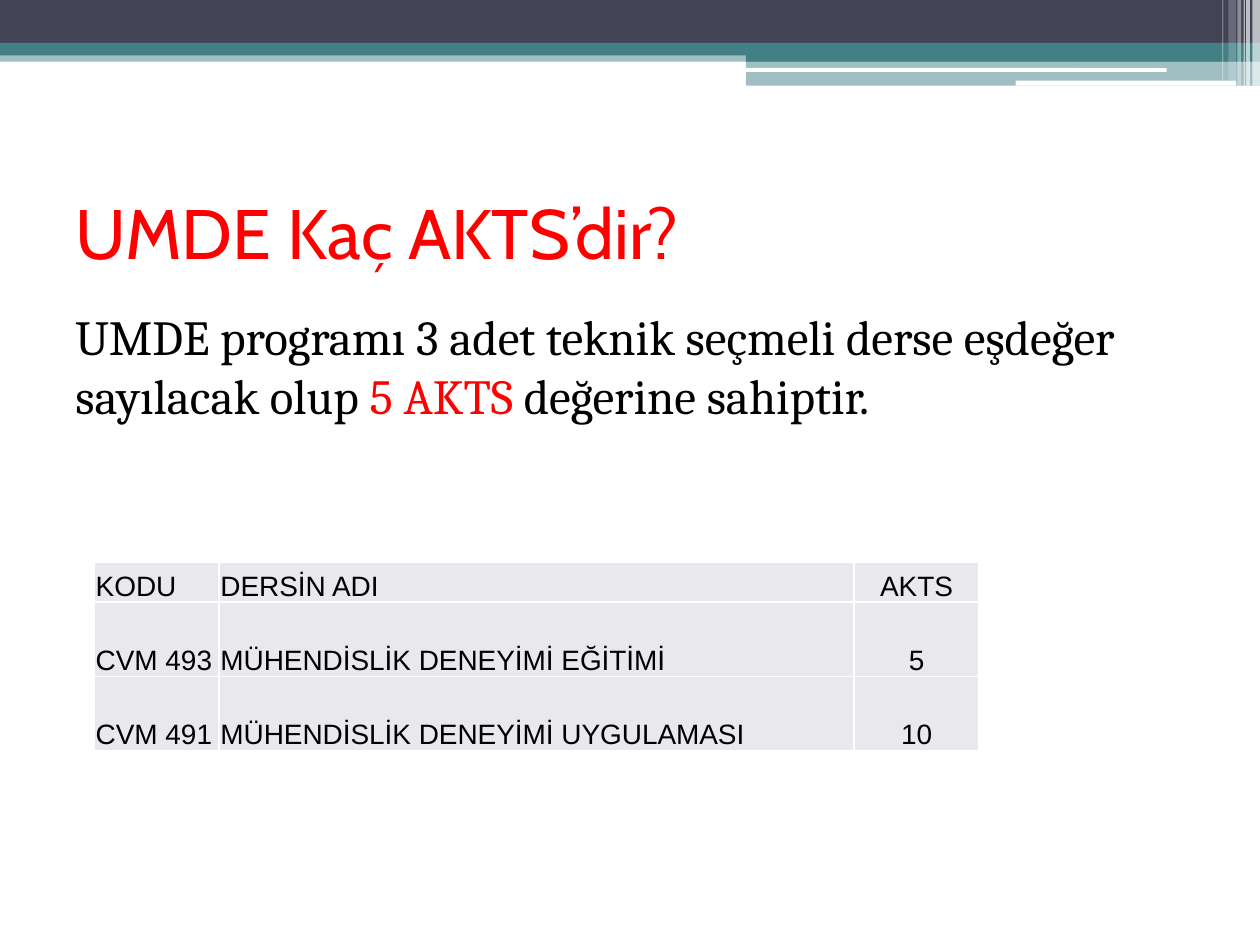
import pptx
import pptx.util
import pptx.dml.color
import pptx.enum.shapes
import pptx.enum.text
import pptx.oxml
import pptx.oxml.ns

Inches, Pt = pptx.util.Inches, pptx.util.Pt
RGB = pptx.dml.color.RGBColor
SHAPE = pptx.enum.shapes.MSO_SHAPE
ANCHOR = pptx.enum.text.MSO_ANCHOR
ALIGN = pptx.enum.text.PP_ALIGN
qn = pptx.oxml.ns.qn

WHITE, BLACK, RED = RGB(255, 255, 255), RGB(0, 0, 0), RGB(255, 0, 0)
NAVY, TEAL, PALE = RGB(0x42, 0x44, 0x56), RGB(0x43, 0x80, 0x86), RGB(0xE9, 0xE9, 0xED)

WIDE, HIGH = 10, 7.5
MID = 5.92  # where the right half of the banner starts

# left, top, width, height, colour, opacity in percent
BANDS = [
    (0, 0.4, WIDE, 0.09, TEAL, 50),
    (0, 0, WIDE, 0.34, NAVY, 100),
    (0, 0.34, WIDE, 0.1, TEAL, 100),
    (MID, 0.39, WIDE - MID, 0.1, TEAL, 100),
    (MID, 0.48, WIDE - MID, 0.2, TEAL, 50),
]
PILLS = [(5.91, 0.54, 3.35, 0.03, WHITE, 100), (8.06, 0.64, 1.75, 0.04, WHITE, 100)]
# left, width, height, opacity of the upright stripes
STRIPES = [
    (9.94, 0.06, 0.68, 65), (9.89, 0.03, 0.68, 65), (9.87, 0.01, 0.68, 60),
    (9.82, 0.03, 0.68, 40), (9.75, 0.06, 0.64, 20), (9.7, 0.01, 0.64, 30),
]

TITLE = [("UMDE Kaç AKTS’dir?", RED)]
BODY = [
    ("UMDE programı 3 adet teknik seçmeli derse eşdeğer sayılacak olup ", BLACK),
    ("5 AKTS", RED),
    (" değerine sahiptir.", BLACK),
]
ROWS = [
    ("KODU", "DERSİN ADI", "AKTS"),
    ("CVM 493", "MÜHENDİSLİK DENEYİMİ EĞİTİMİ", "5"),
    ("CVM 491", "MÜHENDİSLİK DENEYİMİ UYGULAMASI", "10"),
]
COLS = (0.99, 5.04, 0.99)
TALL = (0.32, 0.59, 0.59)


def bar(slide, kind, left, top, width, height, color, alpha):
    shape = slide.shapes.add_shape(kind, *map(Inches, (left, top, width, height)))
    shape.shadow.inherit = False
    shape.line.fill.background()
    shape.fill.solid()
    shape.fill.fore_color.rgb = color
    if alpha < 100:
        tint = shape.fill._xPr.find(".//" + qn("a:srgbClr"))
        tint.append(pptx.oxml.parse_xml(
            f'<a:alpha {pptx.oxml.ns.nsdecls("a")} val="{alpha * 1000}"/>'))


def write(slide, top, height, font, size, runs):
    frame = slide.shapes.add_textbox(
        Inches(0.5), Inches(top), Inches(WIDE - 1), Inches(height)).text_frame
    frame.word_wrap = True
    frame.vertical_anchor = ANCHOR.MIDDLE
    para = frame.paragraphs[0]
    para.font.name, para.font.size = font, Pt(size)
    for text, color in runs:
        run = para.add_run()
        run.text = text
        run.font.color.rgb = color


def edge(cell):
    """Draw thin white borders on all four sides."""
    props = cell._tc.get_or_add_tcPr()
    for spot, side in enumerate("LRTB"):
        props.insert(spot, pptx.oxml.parse_xml(
            f'<a:ln{side} {pptx.oxml.ns.nsdecls("a")} w="{Pt(1)}"><a:solidFill>'
            f'<a:srgbClr val="{WHITE}"/></a:solidFill></a:ln{side}>'))


def fill_cell(cell, text, align):
    cell.margin_left = cell.margin_right = cell.margin_top = Inches(0.01)
    cell.margin_bottom = 0
    cell.vertical_anchor = ANCHOR.BOTTOM
    cell.fill.solid()
    cell.fill.fore_color.rgb = PALE
    edge(cell)
    cell.text = text
    para = cell.text_frame.paragraphs[0]
    para.alignment = align
    para.font.name, para.font.size = "Arial", Pt(16)
    para.font.color.rgb = BLACK
    para.font.bold = False


def add_grid(slide):
    grid = slide.shapes.add_table(
        len(ROWS), len(COLS), Inches(0.75), Inches(4.46),
        Inches(sum(COLS)), Inches(sum(TALL))).table
    for col, width in zip(grid.columns, COLS):
        col.width = Inches(width)
    for row, height, texts in zip(grid.rows, TALL, ROWS):
        row.height = Inches(height)
        for cell, text, align in zip(row.cells, texts, (ALIGN.LEFT, ALIGN.LEFT, ALIGN.CENTER)):
            fill_cell(cell, text, align)


def main():
    deck = pptx.Presentation()
    deck.slide_width, deck.slide_height = Inches(WIDE), Inches(HIGH)
    slide = deck.slides.add_slide(deck.slide_layouts[6])
    for band in BANDS:
        bar(slide, SHAPE.RECTANGLE, *band)
    for pill in PILLS:
        bar(slide, SHAPE.ROUNDED_RECTANGLE, *pill)
    for left, width, height, alpha in STRIPES:
        bar(slide, SHAPE.RECTANGLE, left, 0, width, height, WHITE, alpha)
    write(slide, 1.25, 1.17, "Cabin", 40, TITLE)
    write(slide, 2.43, 0.94, "Cambria", 28, BODY)
    add_grid(slide)
    deck.save("out.pptx")


if __name__ == "__main__":
    main()
